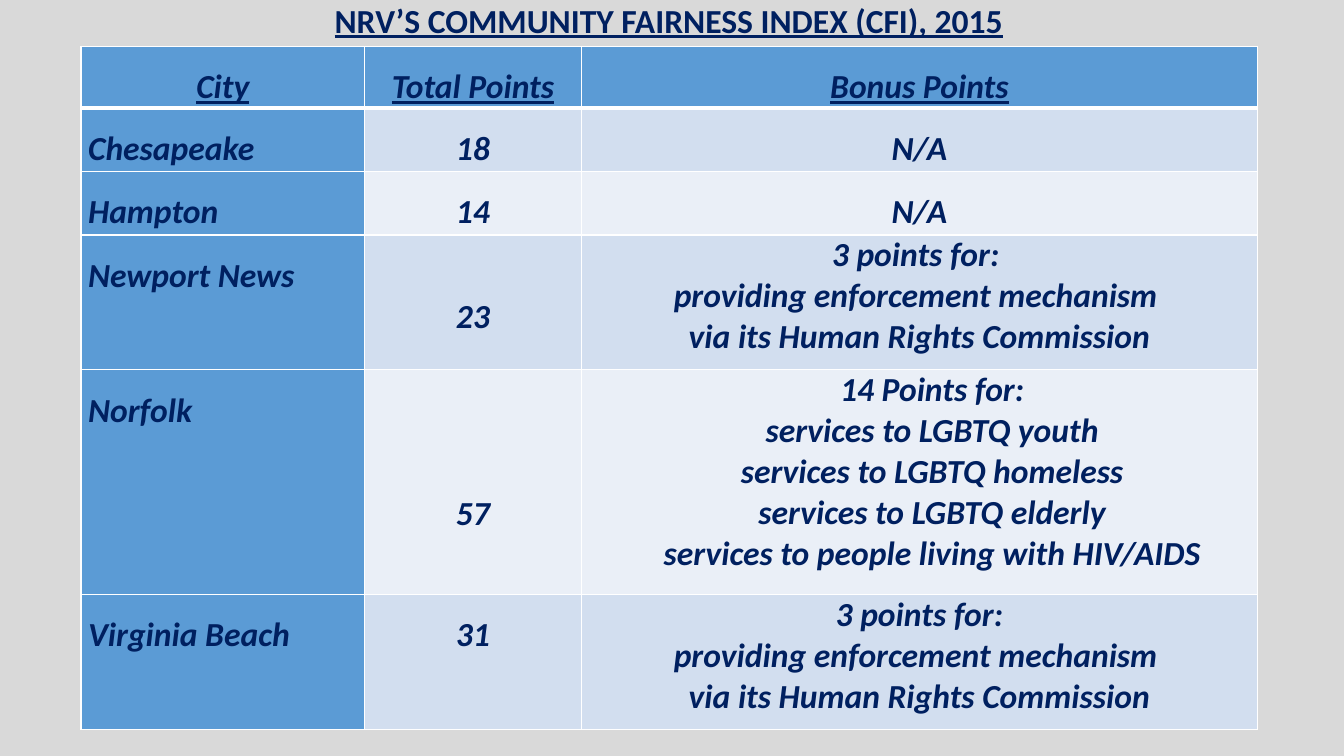
from dataclasses import dataclass

from lxml import etree
from pptx import Presentation
from pptx.dml.color import RGBColor
from pptx.enum.text import MSO_ANCHOR, PP_ALIGN
from pptx.oxml.ns import qn
from pptx.util import Cm, Pt

LEFT, CENTER = PP_ALIGN.LEFT, PP_ALIGN.CENTER
TOP = MSO_ANCHOR.TOP
FONT = "Calibri"
NAVY, BLUE, WHITE, GRAY = "002060", "5B9BD5", "FFFFFF", "D9D9D9"
BANDS = ("D2DEEF", "EAEFF7")
WIDTHS = (7.15, 5.46, 17.04)
HEADS = ("City", "Total Points", "Bonus Points")
HEAD_HIGH = 1.45
COURT = (
    "providing enforcement mechanism ",
    "via its Human Rights Commission",
)


@dataclass
class City:
    name: str
    total: str
    bonus: tuple[str, ...]
    high: float
    drop: float = 0
    indent: float = 0


CITIES = (
    City("Chesapeake", "18", ("N/A",), 1.6),
    City("Hampton", "14", ("N/A",), 1.6),
    City("Newport News", "23", ("3 points for: ", *COURT), 3.4, drop=1.05),
    City(
        "Norfolk",
        "57",
        (
            "14 Points for:",
            "services to LGBTQ youth",
            "services to LGBTQ homeless",
            "services to LGBTQ elderly",
            "services to people living with HIV/AIDS",
        ),
        5.66,
        drop=2.6,
        indent=0.64,
    ),
    City("Virginia Beach", "31", ("3 points for:", *COURT), 3.4),
)


def color(code: str) -> RGBColor:
    return RGBColor.from_string(code)


def write(frame, lines, align=CENTER, space=1.0, italic=True, under=False, indent=0.0) -> None:
    for i, line in enumerate(lines):
        para = frame.paragraphs[0] if i == 0 else frame.add_paragraph()
        para.alignment = align
        para.line_spacing = space
        if indent:
            props = para._p.get_or_add_pPr()
            props.set("marL", str(Cm(indent)))
            props.set("indent", "0")
        run = para.add_run()
        run.text = line
        font = run.font
        font.name, font.size = FONT, Pt(24)
        font.bold, font.italic, font.underline = True, italic, under
        font.color.rgb = color(NAVY)


def edge(cell, side: str, width: float) -> None:
    """Draw one white border of a cell."""
    line = etree.SubElement(cell._tc.get_or_add_tcPr(), qn(f"a:ln{side}"), w=str(Pt(width)))
    fill = etree.SubElement(line, qn("a:solidFill"))
    etree.SubElement(fill, qn("a:srgbClr"), val=WHITE)


def style(cell, fill: str, top: float = 1, bottom: float = 1, drop: float = 0) -> None:
    cell.margin_left = cell.margin_right = Cm(0.18)
    cell.margin_top, cell.margin_bottom = Cm(drop), Cm(0)
    cell.vertical_anchor = TOP
    for side, width in (("L", 1), ("R", 1), ("T", top), ("B", bottom)):
        edge(cell, side, width)
    cell.fill.solid()
    cell.fill.fore_color.rgb = color(fill)


def add_title(slide) -> None:
    box = slide.shapes.add_textbox(Cm(2.21), Cm(-0.13), Cm(29.29), Cm(1.27))
    box.text_frame.word_wrap = True
    write(
        box.text_frame,
        ["NRV’S COMMUNITY FAIRNESS INDEX (CFI), 2015"],
        italic=False,
        under=True,
    )


def add_scores(slide) -> None:
    highs = [HEAD_HIGH, *(city.high for city in CITIES)]
    table = slide.shapes.add_table(
        len(highs), len(WIDTHS), Cm(2.04), Cm(1.17), Cm(sum(WIDTHS)), Cm(sum(highs))
    ).table
    table.horz_banding = table.first_row = False
    for col, width in zip(table.columns, WIDTHS):
        col.width = Cm(width)
    for row, high in zip(table.rows, highs):
        row.height = Cm(high)

    for j, head in enumerate(HEADS):
        cell = table.cell(0, j)
        style(cell, BLUE, bottom=3)
        write(cell.text_frame, [head], space=1.5, under=True)

    for i, city in enumerate(CITIES, 1):
        name, total, bonus = table.rows[i].cells
        top = 3 if i == 1 else 1
        band = BANDS[(i - 1) % 2]
        style(name, BLUE, top)
        write(name.text_frame, [city.name], LEFT, 1.5)
        style(total, band, top, drop=city.drop)
        write(total.text_frame, [city.total], space=1.5)
        style(bonus, band, top)
        space = 1.5 if len(city.bonus) == 1 else 1.0
        write(bonus.text_frame, city.bonus, space=space, indent=city.indent)


def main() -> None:
    deck = Presentation()
    deck.slide_width, deck.slide_height = Cm(33.87), Cm(19.05)
    slide = deck.slides.add_slide(deck.slide_layouts[6])
    slide.background.fill.solid()
    slide.background.fill.fore_color.rgb = color(GRAY)
    add_scores(slide)
    add_title(slide)
    deck.save("out.pptx")


if __name__ == "__main__":
    main()
